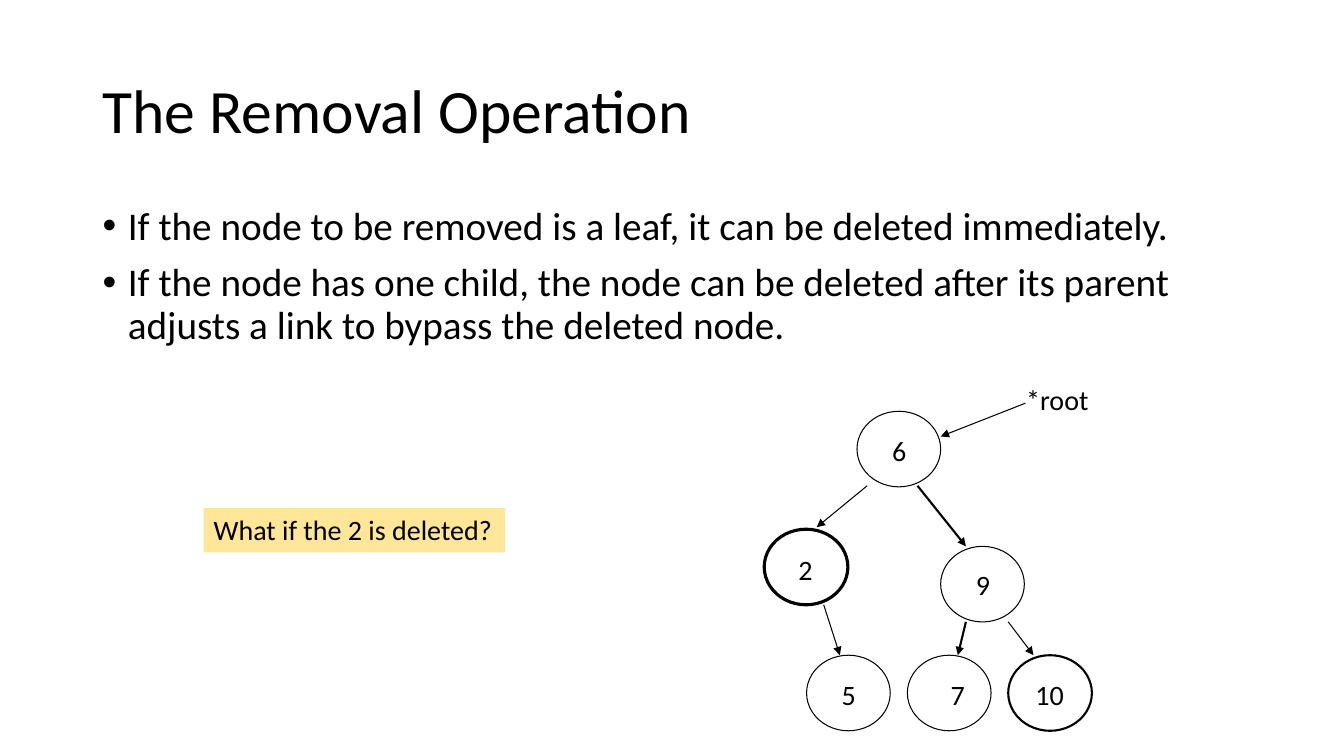
from dataclasses import dataclass

import pptx
import pptx.dml.color
import pptx.enum.shapes
import pptx.enum.text
import pptx.oxml
import pptx.oxml.ns
import pptx.shapes.autoshape
import pptx.slide
import pptx.text.text
import pptx.util
from pptx.util import Inches

BLACK = pptx.dml.color.RGBColor(0x00, 0x00, 0x00)
HIGHLIGHT = pptx.dml.color.RGBColor(0xFF, 0xE6, 0x99)
FONT = "Calibri"
NODE_WIDTH, NODE_HEIGHT = 0.83, 0.75
LABEL_HEIGHT = 0.44


@dataclass(frozen=True)
class Node:
    value: str
    left: float
    top: float
    label_left: float
    label_top: float
    line_width: float = 0.75
    label_width: float = 0.34


@dataclass(frozen=True)
class Arrow:
    start: tuple[float, float]
    end: tuple[float, float]
    line_width: float = 0.75


NODES = [
    Node("6", 8.5, 4.08, 8.75, 4.25),
    Node("2", 7.58, 5.25, 7.82, 5.43, line_width=2.25),
    Node("9", 9.33, 5.42, 9.58, 5.58),
    Node("5", 8, 6.5, 8.25, 6.67),
    Node("7", 9, 6.5, 9.33, 6.67),
    Node("10", 10, 6.5, 10.17, 6.67, line_width=1.5, label_width=0.49),
]

ARROWS = [
    Arrow((10.17, 4), (9.33, 4.33)),
    Arrow((8.6, 4.82), (8.1, 5.23)),
    Arrow((9.1, 4.82), (9.58, 5.42), 1.5),
    Arrow((8.17, 6), (8.33, 6.5)),
    Arrow((9.58, 6.17), (9.5, 6.5), 1.5),
    Arrow((10, 6.17), (10.25, 6.5)),
]

RULES = [
    "If the node to be removed is a leaf, it can be deleted immediately.",
    "If the node has one child, the node can be deleted after its parent "
    "adjusts a link to bypass the deleted node.",
]


def add_span(para: pptx.text.text._Paragraph, text: str, size: float) -> None:
    span = para.add_run()
    span.text = text
    span.font.name = FONT
    span.font.size = pptx.util.Pt(size)
    span.font.color.rgb = BLACK


def add_box(
    page: pptx.slide.Slide, left: float, top: float, width: float, height: float
) -> pptx.shapes.autoshape.Shape:
    box = page.shapes.add_textbox(
        Inches(left), Inches(top), Inches(width), Inches(height)
    )
    box.text_frame.word_wrap = True
    return box


def add_label(
    page: pptx.slide.Slide, text: str, left: float, top: float, width: float
) -> pptx.shapes.autoshape.Shape:
    box = add_box(page, left, top, width, LABEL_HEIGHT)
    box.text_frame.word_wrap = False
    box.text_frame.auto_size = pptx.enum.text.MSO_AUTO_SIZE.SHAPE_TO_FIT_TEXT
    add_span(box.text_frame.paragraphs[0], text, 20)
    return box


def add_title(page: pptx.slide.Slide, text: str) -> None:
    box = add_box(page, 0.92, 0.4, 11.5, 1.45)
    box.text_frame.vertical_anchor = pptx.enum.text.MSO_ANCHOR.MIDDLE
    para = box.text_frame.paragraphs[0]
    para.line_spacing = 0.9
    add_span(para, text, 44)


def add_bullets(page: pptx.slide.Slide, items: list[str]) -> None:
    frame = add_box(page, 0.92, 2, 11.5, 4.76).text_frame
    for index, item in enumerate(items):
        para = frame.add_paragraph() if index else frame.paragraphs[0]
        para.line_spacing = 0.9
        para.space_before = pptx.util.Pt(10)
        properties = para._p.get_or_add_pPr()
        properties.set("marL", str(Inches(0.25)))
        properties.set("indent", str(Inches(-0.25)))
        font = pptx.oxml.ns.qn("a:buFont")
        properties.append(properties.makeelement(font, {"typeface": "Arial"}))
        mark = pptx.oxml.ns.qn("a:buChar")
        properties.append(properties.makeelement(mark, {"char": "•"}))
        add_span(para, item, 28)


def add_node(page: pptx.slide.Slide, node: Node) -> None:
    circle = page.shapes.add_shape(
        pptx.enum.shapes.MSO_SHAPE.OVAL,
        Inches(node.left),
        Inches(node.top),
        Inches(NODE_WIDTH),
        Inches(NODE_HEIGHT),
    )
    circle.shadow.inherit = False
    circle.fill.background()
    circle.line.color.rgb = BLACK
    circle.line.width = pptx.util.Pt(node.line_width)
    add_label(page, node.value, node.label_left, node.label_top, node.label_width)


def add_arrow(page: pptx.slide.Slide, arrow: Arrow) -> None:
    link = page.shapes.add_connector(
        pptx.enum.shapes.MSO_CONNECTOR.STRAIGHT,
        *map(Inches, arrow.start + arrow.end),
    )
    link.line.color.rgb = BLACK
    link.line.width = pptx.util.Pt(arrow.line_width)
    outline = link.line._get_or_add_ln()
    head = pptx.oxml.ns.qn("a:tailEnd")
    outline.append(outline.makeelement(head, {"type": "triangle"}))
    properties = link._element.spPr
    properties.append(properties.makeelement(pptx.oxml.ns.qn("a:effectLst"), {}))


def main() -> None:
    deck = pptx.Presentation()
    deck.slide_width = Inches(13.33)
    deck.slide_height = Inches(7.5)
    page = deck.slides.add_slide(deck.slide_layouts[6])

    add_title(page, "The Removal Operation")
    add_bullets(page, RULES)
    for arrow in ARROWS:
        add_arrow(page, arrow)
    for node in NODES:
        add_node(page, node)
    add_label(page, "*root", 10.08, 3.75, 0.83)
    question = add_label(page, "What if the 2 is deleted?", 2.02, 5.04, 2.99)
    question.fill.solid()
    question.fill.fore_color.rgb = HIGHLIGHT

    deck.save("out.pptx")


if __name__ == "__main__":
    main()
